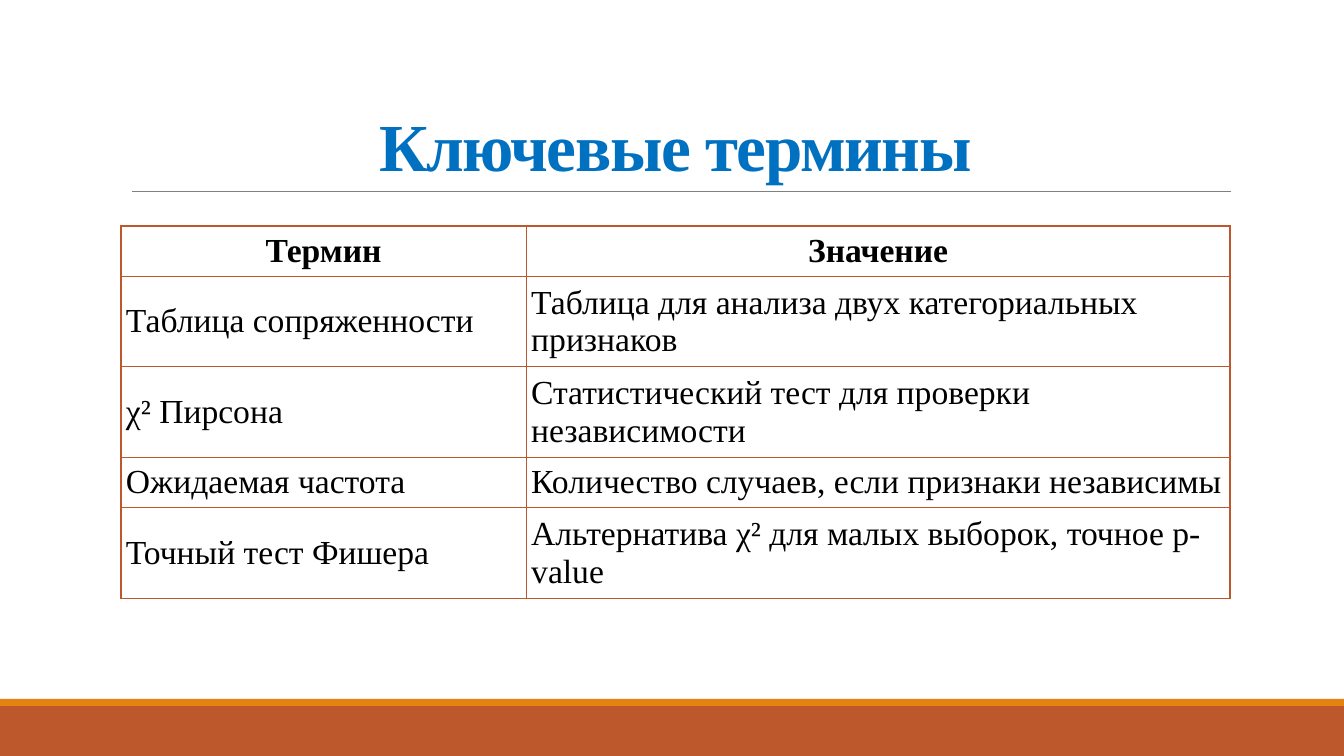
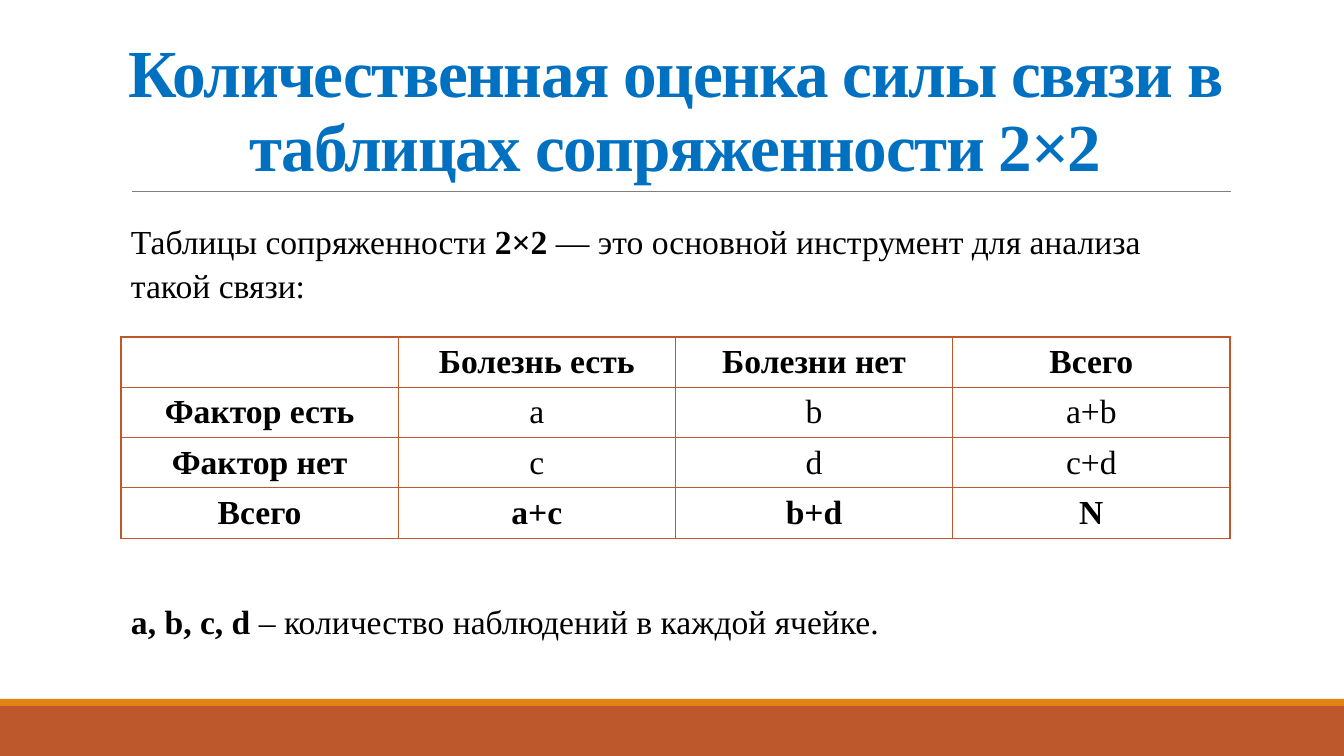
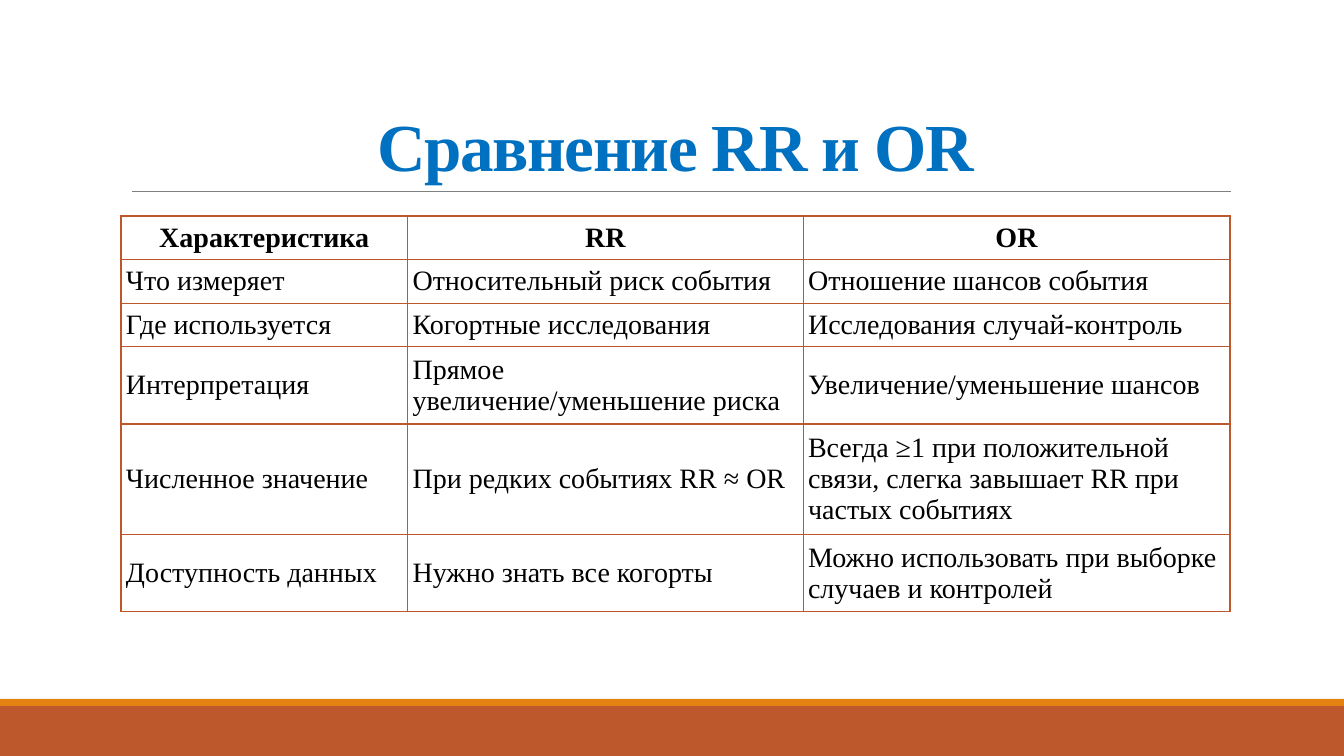
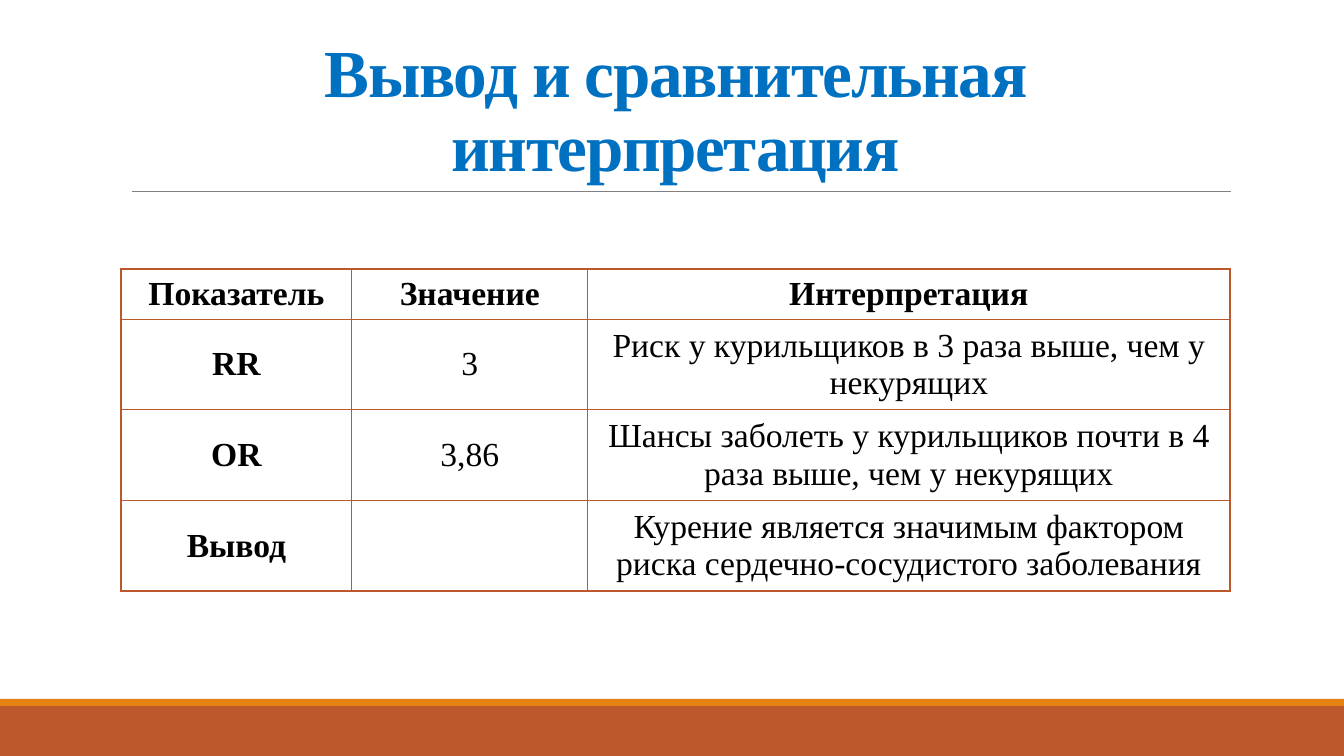
from dataclasses import dataclass

from lxml import etree
from pptx import Presentation
from pptx.dml.color import RGBColor
from pptx.enum.shapes import MSO_CONNECTOR, MSO_SHAPE
from pptx.enum.text import MSO_ANCHOR, PP_ALIGN
from pptx.oxml.ns import qn
from pptx.util import Pt

RECTANGLE = MSO_SHAPE.RECTANGLE
STRAIGHT = MSO_CONNECTOR.STRAIGHT
TOP, MIDDLE, BOTTOM = MSO_ANCHOR.TOP, MSO_ANCHOR.MIDDLE, MSO_ANCHOR.BOTTOM
LEFT, CENTER = PP_ALIGN.LEFT, PP_ALIGN.CENTER


@dataclass(frozen=True)
class Theme:
    font: str = "Times New Roman"
    title_color: str = "0070C0"
    text_color: str = "000000"
    rule_color: str = "808080"
    band_color: str = "BD582C"
    stripe_color: str = "E48312"
    title_size: int = 48
    body_size: int = 24
    compact_size: int = 20
    title_spacing: float = 0.91
    body_spacing: float = 1.1
    title_tracking: int = -100
    rule_width: float = 0.5
    border_width: int = 1


THEME = Theme()
EMU_PER_PX = 914400 / 100.8
SLIDE_WIDTH, SLIDE_HEIGHT = 1344, 756
BAND_TOP, STRIPE_TOP = 706, 699
RULE_LEFT, RULE_RIGHT, RULE_TOP = 132, 1231, 191
CONTENT_LEFT, CONTENT_WIDTH = 121, 1109
TITLE_TOP, TITLE_HEIGHT = 31, 160
INSET = 5
LINE_HEIGHTS = {THEME.body_size: 37, THEME.compact_size: 31}

SLIDES = [
    {
        "title": "Ключевые термины",
        "table": {
            "top": 226,
            "shares": (402, 698),
            "lines": (1, 2, 2, 1, 2),
            "align": LEFT,
            "rows": [
                ("Термин", "Значение"),
                ("Таблица сопряженности", "Таблица для анализа двух категориальных признаков"),
                ("χ² Пирсона", "Статистический тест для проверки независимости"),
                ("Ожидаемая частота", "Количество случаев, если признаки независимы"),
                ("Точный тест Фишера", "Альтернатива χ² для малых выборок, точное p-value"),
            ],
        },
    },
    {
        "title": "Количественная оценка силы связи в таблицах сопряженности 2×2",
        "table": {
            "top": 337,
            "shares": (1, 1, 1, 1),
            "lines": (1, 1, 1, 1),
            "bold_first_column": True,
            "bold_last_row": True,
            "rows": [
                ("", "Болезнь есть", "Болезни нет", "Всего"),
                ("Фактор есть", "a", "b", "a+b"),
                ("Фактор нет", "c", "d", "c+d"),
                ("Всего", "a+c", "b+d", "N"),
            ],
        },
        "remarks": [
            (126, 592, 1082, 46, [("a, b, c, d", True),
                                  (" – количество наблюдений в каждой ячейке.", False)]),
            (126, 212, 1099, 85, [("Таблицы сопряженности ", False), ("2×2", True),
                                  (" — это основной инструмент для анализа такой связи:", False)]),
        ],
    },
    {
        "title": "Сравнение RR и OR",
        "table": {
            "top": 216,
            "shares": (284, 392, 423),
            "lines": (1, 1, 1, 2, 3, 2),
            "align": LEFT,
            "size": THEME.compact_size,
            "rows": [
                ("Характеристика", "RR", "OR"),
                ("Что измеряет", "Относительный риск события", "Отношение шансов события"),
                ("Где используется", "Когортные исследования", "Исследования случай-контроль"),
                ("Интерпретация", "Прямое увеличение/уменьшение риска",
                 "Увеличение/уменьшение шансов"),
                ("Численное значение", "При редких событиях RR ≈ OR",
                 "Всегда ≥1 при положительной связи, слегка завышает RR при частых событиях"),
                ("Доступность данных", "Нужно знать все когорты",
                 "Можно использовать при выборке случаев и контролей"),
            ],
        },
    },
    {
        "title": "Вывод и сравнительная интерпретация",
        "table": {
            "top": 269,
            "shares": (229, 234, 637),
            "lines": (1, 2, 2, 2),
            "bold_first_column": True,
            "rows": [
                ("Показатель", "Значение", "Интерпретация"),
                ("RR", "3", "Риск у курильщиков в 3 раза выше, чем у некурящих"),
                ("OR", "3,86",
                 "Шансы заболеть у курильщиков почти в 4 раза выше, чем у некурящих"),
                ("Вывод", "",
                 "Курение является значимым фактором риска сердечно-сосудистого заболевания"),
            ],
        },
    },
]


def px(length):
    return round(length * EMU_PER_PX)


def box(*lengths):
    return [px(length) for length in lengths]


def style_run(run, size, color, bold):
    run.font.name = THEME.font
    run.font.size = Pt(size)
    run.font.bold = bold
    run.font.color.rgb = RGBColor.from_string(color)


def set_insets(holder):
    holder.margin_left = holder.margin_right = px(INSET)
    holder.margin_top = holder.margin_bottom = px(INSET)


def add_band(slide, top, height, color):
    band = slide.shapes.add_shape(RECTANGLE, *box(0, top, SLIDE_WIDTH, height))
    band.shadow.inherit = False
    band.fill.solid()
    band.fill.fore_color.rgb = RGBColor.from_string(color)
    band.line.fill.background()


def add_frame(slide):
    add_band(slide, BAND_TOP, SLIDE_HEIGHT - BAND_TOP, THEME.band_color)
    add_band(slide, STRIPE_TOP, BAND_TOP - STRIPE_TOP, THEME.stripe_color)
    rule = slide.shapes.add_connector(STRAIGHT, *box(RULE_LEFT, RULE_TOP, RULE_RIGHT, RULE_TOP))
    rule.line.color.rgb = RGBColor.from_string(THEME.rule_color)
    rule.line.width = Pt(THEME.rule_width)
    etree.SubElement(rule._element.spPr, qn("a:effectLst"))


def add_text(slide, place, pieces, size, color, spacing, align=LEFT, anchor=TOP):
    frame = slide.shapes.add_textbox(*box(*place)).text_frame
    frame.word_wrap = True
    frame.vertical_anchor = anchor
    set_insets(frame)
    paragraph = frame.paragraphs[0]
    paragraph.alignment = align
    paragraph.line_spacing = spacing
    for wording, bold in pieces:
        run = paragraph.add_run()
        run.text = wording
        style_run(run, size, color, bold)
    return paragraph


def add_title(slide, title):
    place = (CONTENT_LEFT, TITLE_TOP, CONTENT_WIDTH, TITLE_HEIGHT)
    paragraph = add_text(slide, place, [(title, True)], THEME.title_size, THEME.title_color,
                         THEME.title_spacing, CENTER, BOTTOM)
    paragraph.runs[0].font._element.set("spc", str(THEME.title_tracking))


def add_borders(cell):
    properties = cell._tc.get_or_add_tcPr()
    for side in ("lnL", "lnR", "lnT", "lnB"):
        border = etree.SubElement(properties, qn(f"a:{side}"), w=str(Pt(THEME.border_width)))
        fill = etree.SubElement(border, qn("a:solidFill"))
        etree.SubElement(fill, qn("a:srgbClr"), val=THEME.band_color)


def add_grid(slide, top, shares, lines, rows, align=CENTER, size=THEME.body_size,
             bold_first_column=False, bold_last_row=False):
    heights = [count * LINE_HEIGHTS[size] + 2 * INSET for count in lines]
    place = box(CONTENT_LEFT, top, CONTENT_WIDTH, sum(heights))
    grid = slide.shapes.add_table(len(rows), len(shares), *place).table
    grid.first_row = grid.horz_banding = False
    for column, share in zip(grid.columns, shares):
        column.width = px(CONTENT_WIDTH * share / sum(shares))
    for row, height in zip(grid.rows, heights):
        row.height = px(height)
    for r, wordings in enumerate(rows):
        for c, wording in enumerate(wordings):
            cell = grid.cell(r, c)
            add_borders(cell)
            cell.fill.background()
            cell.vertical_anchor = MIDDLE
            set_insets(cell)
            cell.text_frame.text = wording
            paragraph = cell.text_frame.paragraphs[0]
            paragraph.alignment = CENTER if r == 0 else align
            bold = (r == 0 or (bold_first_column and c == 0)
                    or (bold_last_row and r == len(rows) - 1))
            for run in paragraph.runs:
                style_run(run, size, THEME.text_color, bold)


def main():
    deck = Presentation()
    deck.slide_width, deck.slide_height = box(SLIDE_WIDTH, SLIDE_HEIGHT)
    for content in SLIDES:
        slide = deck.slides.add_slide(deck.slide_layouts[6])
        add_frame(slide)
        add_title(slide, content["title"])
        add_grid(slide, **content["table"])
        for *place, pieces in content.get("remarks", []):
            add_text(slide, place, pieces, THEME.body_size, THEME.text_color, THEME.body_spacing)
    deck.save("out.pptx")


if __name__ == "__main__":
    main()
